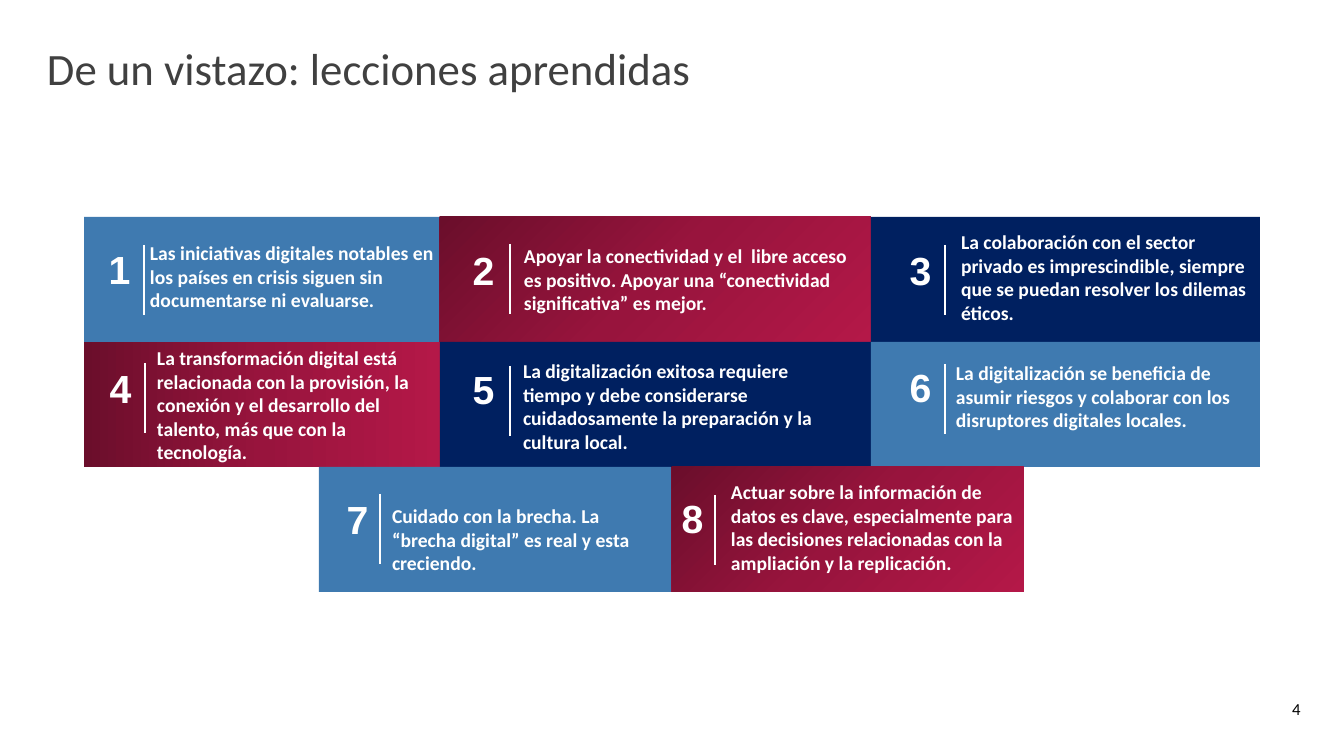
from lxml import etree
from pptx import Presentation
from pptx import util as u
from pptx.dml.color import RGBColor
from pptx.enum import shapes, text
from pptx.oxml import ns

SCALE = 914400 / 100.8
BLUE, NAVY, WHITE = "3F7AB0", "002060", "FFFFFF"
STOPS = ((0, "6B0E2B"), (50, "98143D"), (100, "B41848"))
RADIAL = ('<a:path path="circle"><a:fillToRect r="100000" b="100000"/></a:path>'
          '<a:tileRect l="-100000" t="-100000"/>')
LINEAR = '<a:lin ang="0" scaled="1"/>'

ROWS = (217, 342, 467)
TILE_H = 125
EDGES = (84, 440, 871, 1260)
LAST = (319, 672, 1024)

# fill, number place, divider place, text box, wording
LESSONS = (
    (BLUE, (103, 235), (144, 245), (140, 236, 304, 82),
     "Las iniciativas digitales notables en los países en crisis siguen sin "
     "documentarse ni evaluarse."),
    (RADIAL, (467, 236), (510, 244), (514, 239, 353, 82),
     "Apoyar la conectividad y el  libre acceso es positivo. Apoyar una "
     "“conectividad significativa” es mejor."),
    (NAVY, (904, 236), (945, 245), (951, 225, 306, 104),
     "La colaboración con el sector privado es imprescindible, siempre que se "
     "puedan resolver los dilemas éticos."),
    (LINEAR, (104, 354), (145, 363), (147, 341, 278, 129),
     "La transformación digital está relacionada con la provisión, la conexión "
     "y el desarrollo del talento, más que con la tecnología."),
    (NAVY, (467, 355), (510, 366), (513, 354, 331, 82),
     "La digitalización exitosa requiere tiempo y debe considerarse "
     "cuidadosamente la preparación y la cultura local."),
    (BLUE, (904, 353), (945, 364), (946, 356, 302, 82),
     "La digitalización se beneficia de asumir riesgos y colaborar con los "
     "disruptores digitales locales."),
    (BLUE, (341, 485), (380, 494), (382, 499, 288, 57),
     "Cuidado con la brecha. La “brecha digital” es real y esta creciendo."),
    (RADIAL, (676, 484), (715, 495), (721, 475, 314, 105),
     "Actuar sobre la información de datos es clave, especialmente para las "
     "decisiones relacionadas con la ampliación y la replicación."),
)


def px(*nums):
    return [u.Emu(round(n * SCALE)) for n in nums]


def color(code):
    return RGBColor.from_string(code)


def write(frame, words, size, font, ink, bold=False, align=text.PP_ALIGN.LEFT,
          anchor=text.MSO_ANCHOR.MIDDLE, pad=(0, 0)):
    """Fill a text frame with one run; pad is the side and top inset."""
    frame.word_wrap = True
    frame.vertical_anchor = anchor
    side, top = px(*pad)
    frame.margin_left = frame.margin_right = side
    frame.margin_top = frame.margin_bottom = top
    para = frame.paragraphs[0]
    para.alignment = align
    run = para.add_run()
    run.text = words
    run.font.size = u.Pt(size)
    run.font.name = font
    run.font.bold = bold
    run.font.color.rgb = color(ink)
    return para


def add_title(slide, words):
    title = slide.shapes.title
    title.left, title.top, title.width, title.height = px(47, 47, 1176, 47)
    para = write(title.text_frame, words, 32, "Calibri", "404040")
    para.line_spacing = 0.9


def add_tile(slide, box, fill):
    """Draw a tile; fill is a hex colour or the direction of the red gradient."""
    tile = slide.shapes.add_shape(shapes.MSO_SHAPE.RECTANGLE, *px(*box))
    tile.shadow.inherit = False
    tile.line.fill.background()
    if fill not in (RADIAL, LINEAR):
        tile.fill.solid()
        tile.fill.fore_color.rgb = color(fill)
        return
    stops = "".join(f'<a:gs pos="{pos * 1000}"><a:srgbClr val="{code}"/></a:gs>'
                    for pos, code in STOPS)
    grad = etree.fromstring(f'<a:gradFill {ns.nsdecls("a")} rotWithShape="1">'
                            f'<a:gsLst>{stops}</a:gsLst>{fill}</a:gradFill>')
    tile._element.spPr.find(ns.qn("a:prstGeom")).addnext(grad)


def add_rule(slide, x, y):
    rule = slide.shapes.add_connector(shapes.MSO_CONNECTOR.STRAIGHT,
                                      *px(x, y, x, y + 70))
    rule.line.color.rgb = color(WHITE)
    rule.line.width = u.Pt(1)
    etree.SubElement(rule._element.spPr, ns.qn("a:effectLst"))


def add_text(slide, box, *args, **kinds):
    frame = slide.shapes.add_textbox(*px(*box)).text_frame
    return write(frame, *args, **kinds)


def add_digit(slide, x, y, digit):
    para = add_text(slide, (x, y, 33, 64), str(digit), 28, "Arial", WHITE,
                    bold=True, align=text.PP_ALIGN.CENTER)
    para.line_spacing = 1.07
    para.space_after = u.Pt(8)


def tile_boxes():
    for top, edges in zip(ROWS, (EDGES, EDGES, LAST)):
        for left, right in zip(edges, edges[1:]):
            yield left, top, right - left, TILE_H


def main():
    prs = Presentation()
    prs.slide_width, prs.slide_height = px(1344, 756)
    slide = prs.slides.add_slide(prs.slide_layouts[5])
    add_title(slide, "De un vistazo: lecciones aprendidas")
    for box, lesson in zip(tile_boxes(), LESSONS):
        add_tile(slide, box, lesson[0])
    for digit, (_, spot, rule, box, words) in enumerate(LESSONS, 1):
        add_digit(slide, *spot, digit)
        add_rule(slide, *rule)
        add_text(slide, box, words, 14, "Calibri", WHITE, bold=True,
                 anchor=text.MSO_ANCHOR.TOP, pad=(10, 5))
    add_text(slide, (1271, 687, 51, 44), "4", 12, "Calibri", "000000",
             align=text.PP_ALIGN.CENTER)
    prs.save("out.pptx")


if __name__ == "__main__":
    main()
